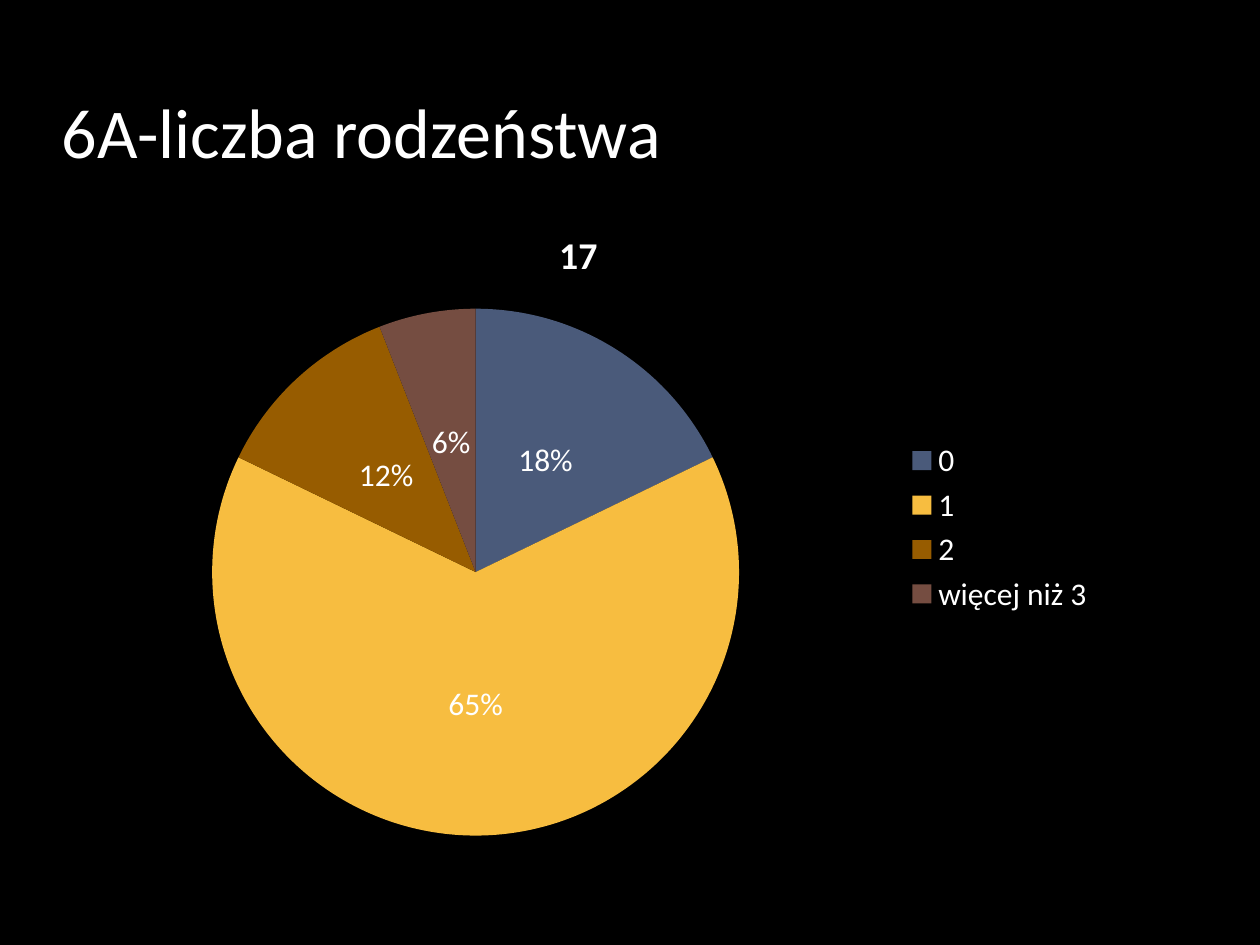
from typing import Any, NamedTuple

from pptx import Presentation
from pptx.chart.data import CategoryChartData
from pptx.dml.color import RGBColor
from pptx.enum.chart import XL_CHART_TYPE, XL_LABEL_POSITION, XL_LEGEND_POSITION
from pptx.enum.text import MSO_ANCHOR, PP_ALIGN
from pptx.util import Inches, Pt

COLORS = {
    "background": "000000",
    "text": "FFFFFF",
    "blue": "4A5A7A",
    "yellow": "F7BD40",
    "ochre": "975C00",
    "brown": "754D41",
}


class SiblingGroup(NamedTuple):
    label: str
    percent: int
    color: str


SIBLING_GROUPS = [
    SiblingGroup("0", 18, "blue"),
    SiblingGroup("1", 65, "yellow"),
    SiblingGroup("2", 12, "ochre"),
    SiblingGroup("więcej niż 3", 6, "brown"),
]

LEFT, WIDTH = Inches(0.39), Inches(8.4)


def set_all(target: Any, values: dict[str, Any]) -> None:
    for name, value in values.items():
        setattr(target, name, value)


def style_font(font: Any, size: float, bold: bool = False) -> None:
    set_all(font, {"name": "Calibri", "size": Pt(size), "bold": bold})
    font.color.rgb = RGBColor.from_string(COLORS["text"])


def add_title(slide: Any, text: str) -> None:
    heading = slide.shapes.title
    set_all(heading, {"left": LEFT, "top": Inches(0.25),
                      "width": WIDTH, "height": Inches(1.17)})
    set_all(heading.text_frame, {"text": text, "word_wrap": True,
                                 "vertical_anchor": MSO_ANCHOR.BOTTOM})
    paragraph = heading.text_frame.paragraphs[0]
    set_all(paragraph, {"alignment": PP_ALIGN.LEFT, "space_before": Pt(4)})
    style_font(paragraph.runs[0].font, 40)


def add_sibling_pie(slide: Any, groups: list[SiblingGroup], pupil_count: str) -> None:
    data = CategoryChartData()
    data.categories = [group.label for group in groups]
    data.add_series("Series 1", [group.percent for group in groups])
    pie = slide.shapes.add_chart(XL_CHART_TYPE.PIE, LEFT, Inches(1.6),
                                 WIDTH, Inches(5.17), data).chart
    style_font(pie.font, 18)

    # Chart title and legend
    pie.has_title = True
    pie.chart_title.text_frame.text = pupil_count
    pie.chart_title.include_in_layout = False
    style_font(pie.chart_title.text_frame.paragraphs[0].runs[0].font, 21.6, bold=True)
    pie.has_legend = True
    set_all(pie.legend, {"position": XL_LEGEND_POSITION.RIGHT,
                         "include_in_layout": False})
    style_font(pie.legend.font, 18)

    # Slices
    plot = pie.plots[0]
    plot.vary_by_categories = True
    for index, group in enumerate(groups):
        slice_format = plot.series[0].points[index].format
        slice_format.fill.solid()
        slice_format.fill.fore_color.rgb = RGBColor.from_string(COLORS[group.color])
        slice_format.line.fill.background()

    # Rounded shares add up to 101, so the labels show the values themselves
    plot.has_data_labels = True
    set_all(plot.data_labels, {"show_value": True, "show_percentage": False,
                               "number_format": '0"%"',
                               "number_format_is_linked": False,
                               "position": XL_LABEL_POSITION.CENTER})
    style_font(plot.data_labels.font, 18)


def main() -> None:
    prs = Presentation()
    set_all(prs, {"slide_width": Inches(10), "slide_height": Inches(7.5)})
    slide = prs.slides.add_slide(prs.slide_layouts[5])
    slide.background.fill.solid()
    slide.background.fill.fore_color.rgb = RGBColor.from_string(COLORS["background"])

    add_sibling_pie(slide, SIBLING_GROUPS, "17")
    add_title(slide, "6A-liczba rodzeństwa")
    prs.save("out.pptx")


if __name__ == "__main__":
    main()
